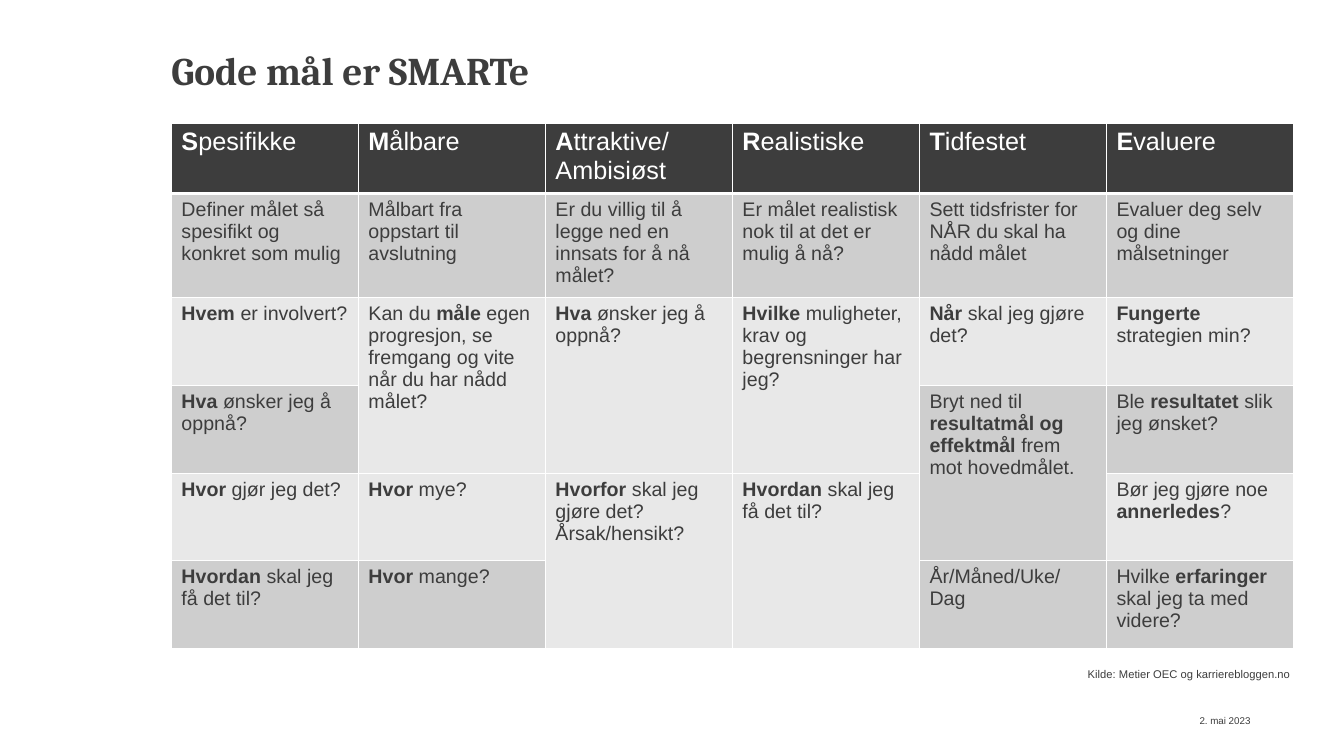
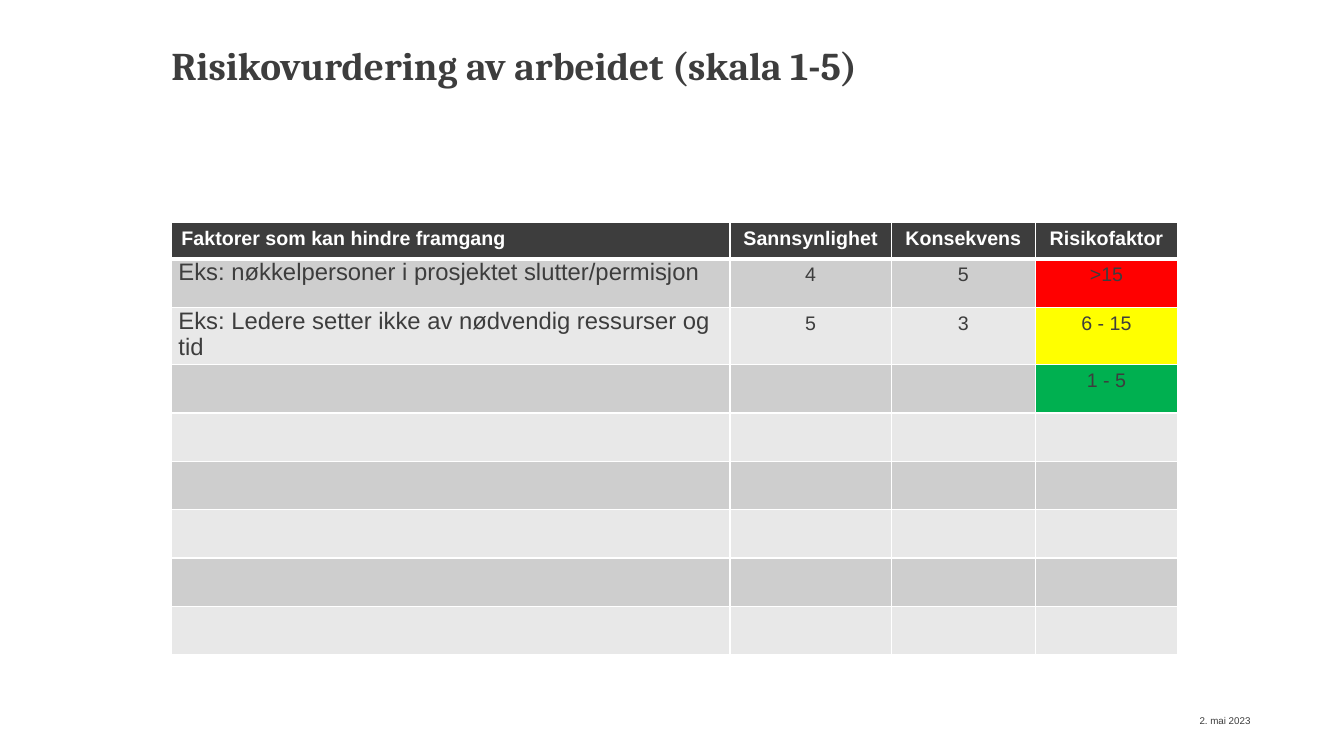
"""Build two slides: a table of SMARTe goals and a risk assessment table."""
from lxml import etree
from pptx import Presentation
from pptx.dml.color import RGBColor
from pptx.enum.text import MSO_ANCHOR, MSO_AUTO_SIZE, PP_ALIGN
from pptx.oxml.ns import qn
from pptx.util import Inches, Pt

LEFT, RIGHT, CENTER = PP_ALIGN.LEFT, PP_ALIGN.RIGHT, PP_ALIGN.CENTER
TOP, MIDDLE = MSO_ANCHOR.TOP, MSO_ANCHOR.MIDDLE
NO_AUTOFIT = MSO_AUTO_SIZE.NONE
color = RGBColor.from_string

DARK, WHITE = "3D3D3D", "FFFFFF"
BANDS = ["E8E8E8", "CECECE"]
MARGIN = 1.7
TITLE_WIDTH = 9.97

prs = Presentation()
prs.slide_width = Inches(13.33)
prs.slide_height = Inches(7.5)
title_only = prs.slide_layouts[5]


def add_text(slide, text, left, top, width, height, size, align, anchor):
    """Add a small one-line label."""
    frame = slide.shapes.add_textbox(
        Inches(left), Inches(top), Inches(width), Inches(height)).text_frame
    frame.word_wrap = True
    frame.vertical_anchor = anchor
    label = frame.paragraphs[0]
    label.text = text
    label.alignment = align
    label.font.name = "Arial"
    label.font.size = Pt(size)
    label.font.color.rgb = color(DARK)


def add_grid(slide, top, widths, heights, rows, header_size):
    """Add a banded table; ** marks bold text and None joins a cell to the one above."""
    table = slide.shapes.add_table(
        len(rows), len(widths), Inches(MARGIN), Inches(top),
        Inches(sum(widths)), Inches(sum(heights))).table
    for column, width in zip(table.columns, widths):
        column.width = Inches(width)
    for r, texts in enumerate(rows):
        table.rows[r].height = Inches(heights[r])
        for c, text in enumerate(texts):
            cell = table.cell(r, c)
            tc_pr = cell._tc.get_or_add_tcPr()
            for side in "LRTB":
                thick = (r, side) in [(0, "B"), (1, "T")]
                line = etree.SubElement(tc_pr, qn(f"a:ln{side}"), w=str(Pt(3 if thick else 1)))
                fill = etree.SubElement(line, qn("a:solidFill"))
                etree.SubElement(fill, qn("a:srgbClr"), val=WHITE)
            cell.fill.solid()
            cell.fill.fore_color.rgb = color(BANDS[r % 2] if r else DARK)
            if text is None:
                table.cell(r - 1, c).merge(cell)
            elif text:
                frame = cell.text_frame
                for i, line_text in enumerate(text.split("\n")):
                    paragraph = frame.add_paragraph() if i else frame.paragraphs[0]
                    paragraph.font.name = "Arial"
                    paragraph.font.size = Pt(14 if r else header_size)
                    paragraph.font.color.rgb = color(DARK if r else WHITE)
                    for part, words in enumerate(line_text.split("**")):
                        if words:
                            run = paragraph.add_run()
                            run.text = words
                            run.font.bold = part % 2 == 1
    return table


slides = []
for heading, height, spacing in [
    ("Gode mål er SMARTe", 0.46, 1.0),
    ("Risikovurdering av arbeidet (skala 1-5)", 0.94, 0.9),
]:
    slide = prs.slides.add_slide(title_only)
    title = slide.shapes.title
    title.left, title.top = Inches(MARGIN), Inches(0.46)
    title.width, title.height = Inches(TITLE_WIDTH), Inches(height)
    frame = title.text_frame
    frame.auto_size = NO_AUTOFIT
    frame.vertical_anchor = TOP
    frame.margin_left = frame.margin_right = frame.margin_top = frame.margin_bottom = 0
    paragraph = frame.paragraphs[0]
    paragraph.text = heading
    paragraph.alignment = LEFT
    paragraph.line_spacing = spacing
    paragraph.font.name = "Cambria"
    paragraph.font.size = Pt(28)
    paragraph.font.bold = True
    paragraph.font.color.rgb = color(DARK)
    add_text(slide, "2. mai 2023", 11.32, 6.95, 1.18, 0.4, 7, RIGHT, MIDDLE)
    slides.append(slide)

goals_slide, risk_slide = slides

goals = [
    ["**S**pesifikke", "**M**ålbare", "**A**ttraktive/\nAmbisiøst",
     "**R**ealistiske", "**T**idfestet", "**E**valuere"],
    ["Definer målet så spesifikt og konkret som mulig",
     "Målbart fra oppstart til avslutning",
     "Er du villig til å legge ned en innsats for å nå målet?",
     "Er målet realistisk nok til at det er mulig å nå?",
     "Sett tidsfrister for NÅR du skal ha nådd målet",
     "Evaluer deg selv og dine målsetninger"],
    ["**Hvem **er involvert?",
     "Kan du **måle** egen progresjon, se fremgang og vite når du har nådd målet?",
     "**Hva **ønsker jeg å oppnå?",
     "**Hvilke** muligheter, krav og begrensninger har jeg?",
     "**Når **skal jeg gjøre det?",
     "**Fungerte** strategien min?"],
    ["**Hva **ønsker jeg å oppnå?", None, None, None,
     "Bryt ned til **resultatmål og effektmål **frem mot hovedmålet.",
     "Ble **resultatet **slik jeg ønsket?"],
    ["**Hvor **gjør jeg det?", "**Hvor** mye?",
     "**Hvorfor **skal jeg gjøre det? Årsak/hensikt?",
     "**Hvordan** skal jeg få det til?", None,
     "Bør jeg gjøre noe **annerledes**?"],
    ["**Hvordan** skal jeg få det til?", "**Hvor** mange?", None, None,
     "År/Måned/Uke/Dag",
     "Hvilke **erfaringer** skal jeg ta med videre?"],
]
add_grid(goals_slide, 1.22, [11.13 / 6] * 6, [0.68, 0.97] + [0.87] * 4, goals, 18)
add_text(goals_slide, "Kilde: Metier OEC og karrierebloggen.no",
         10.69, 6.57, 2.34, 0.24, 8, LEFT, TOP)

risks = [
    ["**Faktorer som kan hindre framgang**", "**Sannsynlighet**",
     "**Konsekvens**", "**Risikofaktor**"],
    ["Eks: nøkkelpersoner i prosjektet slutter/permisjon", "4", "5", ">15"],
    ["Eks: Ledere setter ikke av nødvendig ressurser og tid", "5", "3", "6 - 15"],
    ["", "", "", "1 - 5"],
] + [[""] * 4] * 5
risk_table = add_grid(risk_slide, 2.21, [5.54, 1.6, 1.43, 1.41],
                      [0.36, 0.48, 0.53] + [0.48] * 6, risks, 14)
for r in range(4):
    for c in range(1, 4):
        risk_table.cell(r, c).text_frame.paragraphs[0].alignment = CENTER
for r in (1, 2):
    example = risk_table.cell(r, 0)
    example.margin_left = example.margin_right = Inches(0.07)
    example.margin_top = example.margin_bottom = 0
    example.text_frame.paragraphs[0].font.size = Pt(17)
for r, level in enumerate(["FF0000", "FFFF00", "00B050"], start=1):
    risk_table.cell(r, 3).fill.fore_color.rgb = color(level)

prs.save("out.pptx")
